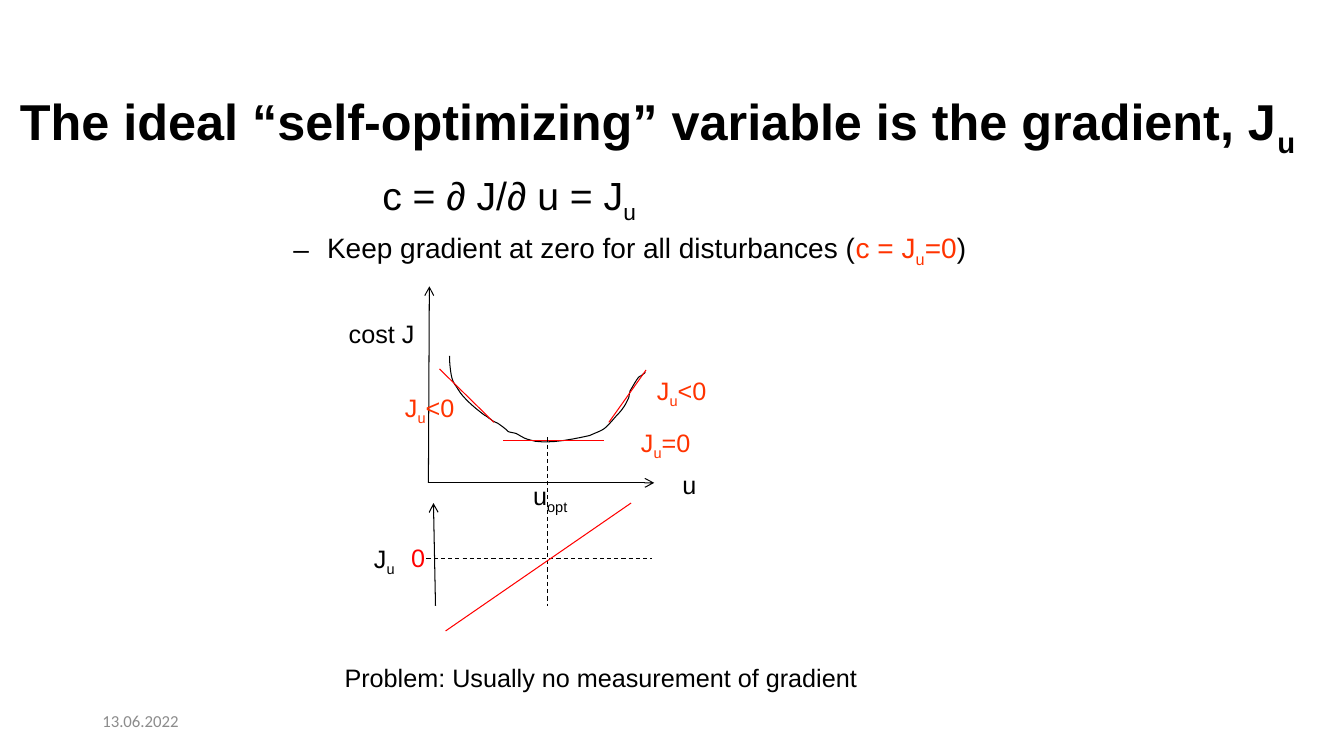
from lxml.etree import SubElement
from pptx import Presentation
from pptx.dml.color import RGBColor
from pptx.enum.dml import MSO_LINE
from pptx.enum.shapes import MSO_CONNECTOR
from pptx.enum.text import MSO_ANCHOR
from pptx.oxml.ns import qn
from pptx.util import Pt

BLACK = RGBColor(0, 0, 0)
RED = RGBColor(255, 0, 0)
ORANGE = RGBColor(255, 51, 0)
GRAY = RGBColor(140, 140, 140)
WHITE = RGBColor(255, 255, 255)

# Bezier points of the cost curve, relative to the cost plot; three per segment
COST_CURVE = [
    (15.1, 49.7),
    (15.1, 54), (15.8, 66.2), (18.7, 69.8),
    (20.2, 72), (21.6, 74.2), (23, 76.3),
    (27.4, 82.1), (35.3, 88.6), (40.3, 92.2),
    (41.8, 92.9), (43.2, 94.3), (44.6, 95),
    (46.1, 96.5), (48.2, 97.2), (49.7, 97.9),
    (61.2, 105.8), (53.3, 103), (62.6, 105.1),
    (65.5, 106.6), (68.4, 108.7), (71.3, 109.4),
    (83.5, 114.5), (111.6, 107.3), (115.2, 106.6),
    (126.7, 101.5), (124.6, 103.7), (134.6, 92.2),
    (139, 87.8), (141.1, 84.2), (143.3, 79.2),
    (143.3, 77.8), (144, 75.6), (144, 74.9),
    (146.2, 71.3), (147.6, 68.4), (149.8, 65.5),
    (150.5, 64.1), (152.6, 64.1), (153.4, 62.6),
    (154.1, 62.6), (154.8, 61.9), (154.8, 61.2),
]


def add_spans(para, markup, size, color=BLACK, font="Arial", bold=False):
    """Add text in which the parts between underscores are subscripts."""
    for index, text in enumerate(markup.split("_")):
        if not text:
            continue
        span = para.add_run()
        span.text = text
        span.font.name = font
        span.font.size = Pt(size)
        span.font.bold = bold
        span.font.color.rgb = color
        if index % 2:
            span._r.get_or_add_rPr().set("baseline", "-25000")


def add_box(shapes, left, top, width, height, anchor=MSO_ANCHOR.TOP, wrap=True):
    box = shapes.add_textbox(Pt(left), Pt(top), Pt(width), Pt(height))
    box.text_frame.word_wrap = wrap
    box.text_frame.vertical_anchor = anchor
    return box.text_frame


def add_label(shapes, left, top, width, markup, color=BLACK):
    frame = add_box(shapes, left, top, width, 28.8, wrap=False)
    add_spans(frame.paragraphs[0], markup, 18, color)


def add_line(shapes, left, top, ends, color=BLACK, dashed=False, arrow=False):
    x1, y1, x2, y2 = ends
    line = shapes.add_connector(MSO_CONNECTOR.STRAIGHT, Pt(left + x1), Pt(top + y1),
                                Pt(left + x2), Pt(top + y2))
    line.line.color.rgb = color
    line.line.width = Pt(0.75)
    if dashed:
        line.line.dash_style = MSO_LINE.DASH
    if arrow:
        SubElement(line.line._get_or_add_ln(), qn("a:tailEnd"), type="arrow")
    SubElement(line._element.spPr, qn("a:effectLst"))


def add_curve(shapes, left, top, points, steps=8):
    """Draw joined cubic Bezier segments as a fine polyline."""
    outline = [points[0]]
    for start in range(0, len(points) - 1, 3):
        corners = points[start:start + 4]
        for step in range(1, steps + 1):
            t = step / steps
            weights = ((1 - t) ** 3, 3 * t * (1 - t) ** 2, 3 * t ** 2 * (1 - t), t ** 3)
            outline.append(tuple(sum(w * corner[axis] for w, corner in zip(weights, corners))
                                 for axis in (0, 1)))
    # The builder keeps whole units, so work in hundredths of a point
    units = [(100 * (left + x), 100 * (top + y)) for x, y in outline]
    builder = shapes.build_freeform(*units[0], scale=Pt(1) / 100)
    builder.add_line_segments(units[1:], close=False)
    curve = builder.convert_to_shape()
    curve.fill.background()
    curve.line.color.rgb = BLACK
    curve.line.width = Pt(0.75)
    curve.shadow.inherit = False


def add_title(page, left, top, width, height):
    frame = add_box(page.shapes, left, top, width, height, MSO_ANCHOR.MIDDLE)
    add_spans(frame.paragraphs[0], "The ideal “self-optimizing” variable is the gradient, J_u_",
              36, bold=True)


def add_statement(page, left, top, width, height):
    frame = add_box(page.shapes, left, top, width, height)
    # Formula
    formula = frame.paragraphs[0]
    formula._p.get_or_add_pPr().set("marL", str(Pt(99)))
    add_spans(formula, "c = ∂ J/∂ u = J_u_", 28)
    # Dash item
    item = frame.add_paragraph()
    props = item._p.get_or_add_pPr()
    props.set("marL", str(Pt(59.5)))
    props.set("indent", str(-Pt(24)))
    SubElement(props, qn("a:buFont"), typeface="Arial")
    SubElement(props, qn("a:buChar"), char="–")
    item.space_before = Pt(4)
    add_spans(item, "Keep gradient at zero for all disturbances (", 20)
    add_spans(item, "c = J_u_=0", 20, ORANGE)
    add_spans(item, ")", 20)


def add_cost_plot(page, left, top, width, height):
    shapes = page.shapes.add_group_shape().shapes
    # Axes
    add_line(shapes, left, top, (0, height, width, height), arrow=True)
    add_line(shapes, left, top, (0, height, 0.7, 0), arrow=True)
    add_label(shapes, left + width + 13, top + height - 13, 24.5, "u")
    add_label(shapes, left - 64, top + 19.4, 62, "cost J")
    # Curve and its tangents
    add_curve(shapes, left, top, COST_CURVE)
    for ends in ((53.3, 110.2, 125.3, 110.2), (7.9, 59, 46.8, 97.2),
                 (128.9, 97.2, 155.5, 59.8)):
        add_line(shapes, left, top, ends, RED)
    for x, y, markup in ((144.7, 97.2, "J_u_=0"), (-23.8, 72, "J_u_<0"),
                         (156.2, 59.8, "J_u_<0")):
        add_label(shapes, left + x, top + y, 51, markup, ORANGE)


def add_gradient_plot(page, left, top, width, height):
    shapes = page.shapes.add_group_shape().shapes
    # Optimum marker, axis and zero line
    add_line(shapes, left, top, (86.4, 0, 86.4, height), dashed=True)
    add_line(shapes, left, top, (6.5, height, 5, 46.8), arrow=True)
    add_line(shapes, left, top, (0, 86.4, width, 86.4), dashed=True)
    # Gradient
    add_line(shapes, left, top, (13.7, 138.2, 146.2, 46.8), RED)
    # Labels
    add_label(shapes, left + 69.1, top + 27.4, 41.8, "u_opt_")
    add_label(shapes, left - 44.6, top + 72, 30.2, "J_u_")
    add_label(shapes, left - 18, top + 71.3, 24.5, "0", RED)


def add_date(page, left, top, width, height):
    frame = add_box(page.shapes, left, top, width, height, MSO_ANCHOR.MIDDLE)
    add_spans(frame.paragraphs[0], "13.06.2022", 12, GRAY, "Calibri")


def main():
    deck = Presentation()
    deck.slide_width, deck.slide_height = Pt(960), Pt(540)
    page = deck.slides.add_slide(deck.slide_layouts[6])
    page.background.fill.solid()
    page.background.fill.fore_color.rgb = WHITE
    add_date(page, 66, 500.4, 216, 28.8)
    add_title(page, 7.2, 36.7, 953, 104.4)
    add_statement(page, 167, 118.8, 669, 71.2)
    add_cost_plot(page, 306, 204.5, 161.3, 140.4)
    add_gradient_plot(page, 304.6, 312.5, 161.3, 120.2)
    add_label(page.shapes, 239, 469.4, 384, "Problem: Usually no measurement of gradient")
    deck.save("out.pptx")


if __name__ == "__main__":
    main()
